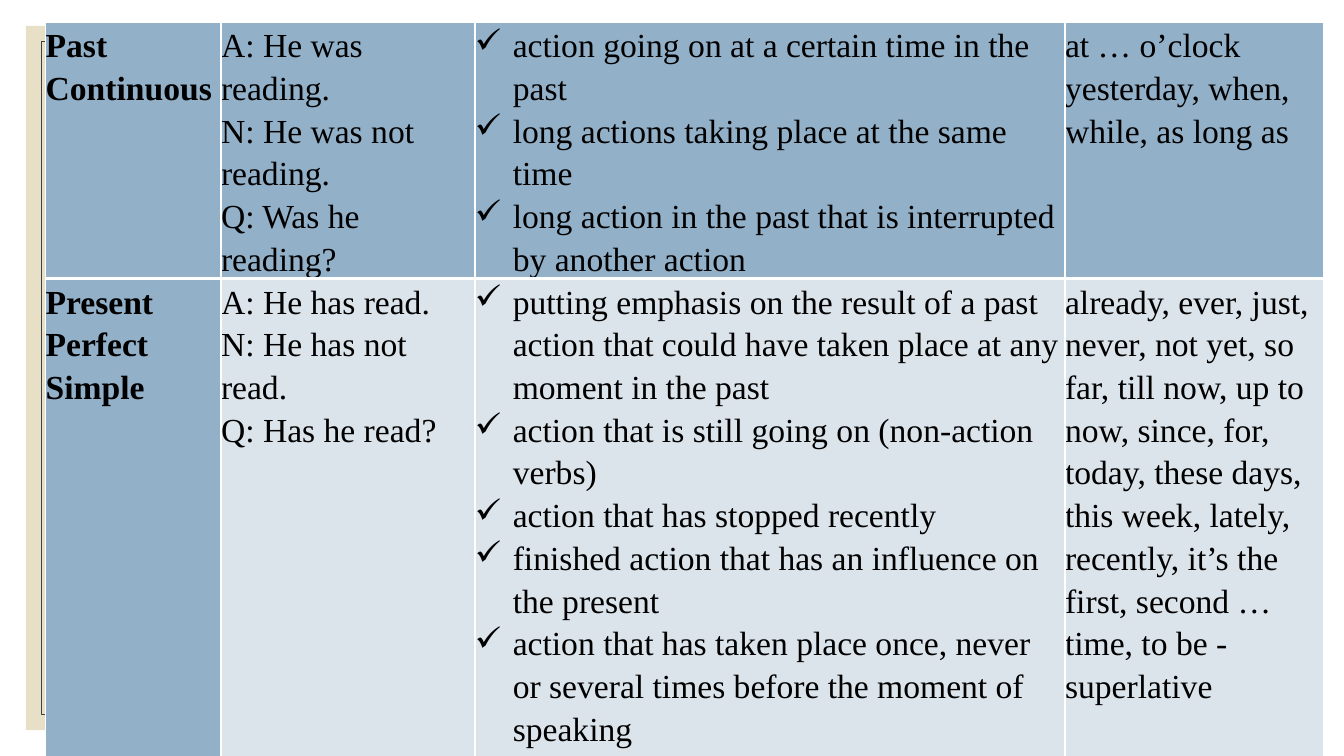
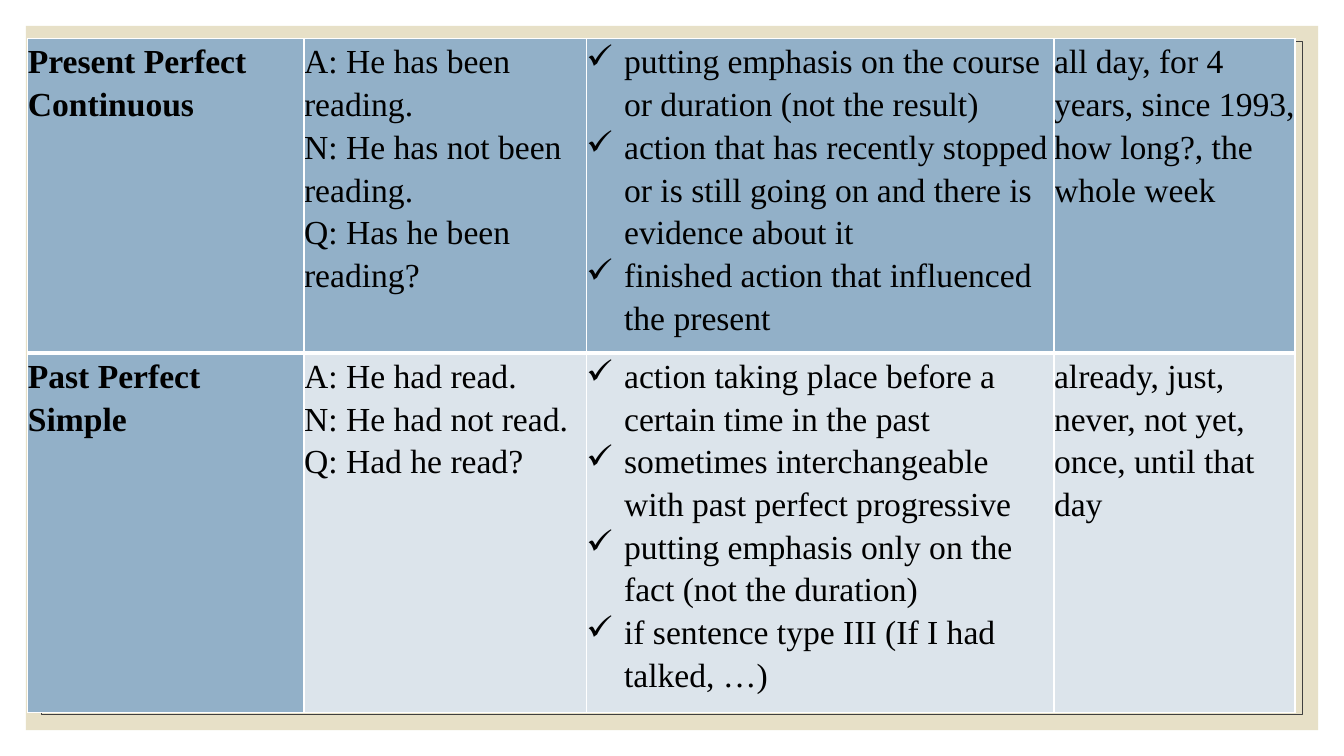
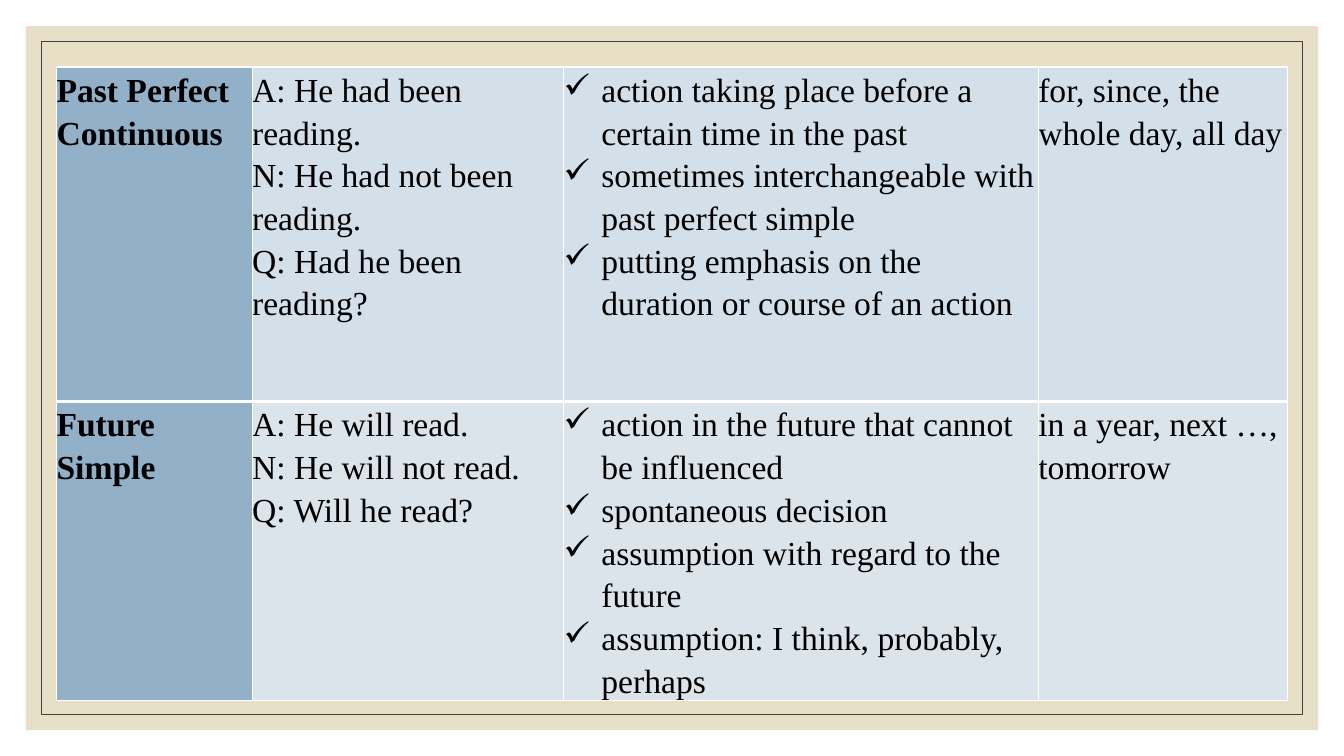
from lxml import etree
from pptx import Presentation
from pptx import util as u
from pptx.dml import color
from pptx.enum import shapes, text
from pptx.oxml import ns

COLORS = {
    "sand": "E7E0C7", "frame": "404040", "ink": "000000", "white": "FFFFFF",
    "blue": "92B0C8", "light": "D3DFE9", "pale": "DCE4EB",
}
FONT = "Times New Roman"
SIZE = 24
SPACING = 1.15
INDENT = 27
PAGE_WIDTH, PAGE_HEIGHT = 960, 540

TENSE_TABLES = [
    {
        "at": (32.6, 16),
        "columns": (125.3, 181.4, 421.5, 185),
        "heights": (182.2, 344.2),
        "fills": ("blue", "pale"),
        "rows": [
            ("Past Continuous",
             ["A: He was reading.", "N: He was not reading.", "Q: Was he reading?"],
             ["action going on at a certain time in the past",
              "long actions taking place at the same time",
              "long action in the past that is interrupted by another action"],
             "at … o’clock yesterday, when, while, as long as"),
            ("Present Perfect Simple",
             ["A: He has read.", "N: He has not read.", "Q: Has he read?"],
             ["putting emphasis on the result of a past action that could have "
              "taken place at any moment in the past",
              "action that is still going on (non-action verbs)",
              "action that has stopped recently",
              "finished action that has an influence on the present",
              "action that has taken place once, never or several times before "
              "the moment of speaking"],
             "already, ever, just, never, not yet, so far, till now, up to now, "
             "since, for, today, these days, this week, lately, recently, "
             "it’s the first, second …time, to be - superlative"),
        ],
    },
    {
        "at": (19.9, 27.5),
        "columns": (197.3, 201.6, 334.1, 172.1),
        "heights": (224.6, 257),
        "fills": ("blue", "pale"),
        "rows": [
            ("Present Perfect Continuous",
             ["A: He has been reading.", "N: He has not been reading.",
              "Q: Has he been reading?"],
             ["putting emphasis on the course or duration (not the result)",
              "action that has recently stopped or is still going on and there "
              "is evidence about it",
              "finished action that influenced the present"],
             "all day, for 4 years, since 1993, how long?, the whole week"),
            ("Past Perfect Simple",
             ["A: He had read.", "N: He had not read.", "Q: Had he read?"],
             ["action taking place before a certain time in the past",
              "sometimes interchangeable with past perfect progressive",
              "putting emphasis only on the fact (not the duration)",
              "if sentence type III (If I had talked, …)"],
             "already, just, never, not yet, once, until that day"),
        ],
    },
    {
        "at": (40.4, 47.8),
        "columns": (139.7, 222.5, 339.1, 177.8),
        "heights": (239, 213),
        "fills": ("light", "pale"),
        "rows": [
            ("Past Perfect Continuous",
             ["A: He had been reading.", "N: He had not been reading.",
              "Q: Had he been reading?"],
             ["action taking place before a certain time in the past",
              "sometimes interchangeable with past perfect simple",
              "putting emphasis on the duration or course of an action"],
             "for, since, the whole day, all day"),
            ("Future Simple",
             ["A: He will read.", "N: He will not read.", "Q: Will he read?"],
             ["action in the future that cannot be influenced",
              "spontaneous decision",
              "assumption with regard to the future",
              "assumption: I think, probably, perhaps"],
             "in a year, next …, tomorrow"),
        ],
    },
]


def rgb(name):
    return color.RGBColor.from_string(COLORS[name])


def add_panel(page, margin, fill=None, line=None):
    panel = page.shapes.add_shape(
        shapes.MSO_SHAPE.RECTANGLE, u.Pt(margin), u.Pt(margin),
        u.Pt(PAGE_WIDTH - 2 * margin), u.Pt(PAGE_HEIGHT - 2 * margin))
    panel.shadow.inherit = False
    if fill:
        panel.fill.solid()
        panel.fill.fore_color.rgb = rgb(fill)
    else:
        panel.fill.background()
    if line:
        panel.line.color.rgb = rgb(line)
        panel.line.width = u.Pt(0.5)
    else:
        panel.line.fill.background()
    return panel


def share_frame(page):
    for panel in (add_panel(page, 18.5, fill="sand"),
                  add_panel(page, 29.5, line="frame")):
        page.slide_layout.shapes.element.append(panel.element)


def add_borders(cell, top, bottom):
    properties = cell._tc.get_or_add_tcPr()
    for side, width in (("L", 1), ("R", 1), ("T", top), ("B", bottom)):
        line = etree.SubElement(properties, ns.qn("a:ln" + side), w=str(u.Pt(width)))
        fill = etree.SubElement(line, ns.qn("a:solidFill"))
        etree.SubElement(fill, ns.qn("a:srgbClr"), val=COLORS["white"])


def add_check_bullet(para):
    properties = para._p.get_or_add_pPr()
    properties.set("marL", str(u.Pt(INDENT)))
    properties.set("indent", str(-u.Pt(INDENT)))
    etree.SubElement(properties, ns.qn("a:buChar"), char="✓")


def fill_cell(cell, lines, fill, bold=False, checked=False):
    cell.margin_left = cell.margin_right = cell.margin_top = cell.margin_bottom = 0
    cell.vertical_anchor = text.MSO_ANCHOR.TOP
    cell.fill.solid()
    cell.fill.fore_color.rgb = rgb(fill)
    frame = cell.text_frame
    for index, line in enumerate(lines):
        para = frame.add_paragraph() if index else frame.paragraphs[0]
        para.line_spacing = SPACING
        if checked:
            add_check_bullet(para)
        span = para.add_run()
        span.text = line
        span.font.name = FONT
        span.font.size = u.Pt(SIZE)
        span.font.bold = bold
        span.font.color.rgb = rgb("ink")


def add_tense_table(page, at, columns, heights, fills, rows):
    left, top = at
    table = page.shapes.add_table(
        len(rows), len(columns), u.Pt(left), u.Pt(top),
        u.Pt(sum(columns)), u.Pt(sum(heights))).table
    table.first_row = table.horz_banding = False
    for column, width in zip(table.columns, columns):
        column.width = u.Pt(width)
    for index, (tense, forms, uses, signals) in enumerate(rows):
        table.rows[index].height = u.Pt(heights[index])
        cells = table.rows[index].cells
        for cell in cells:
            add_borders(cell, top=3 if index else 1, bottom=1 if index else 3)
        fill = fills[index]
        fill_cell(cells[0], [tense], "blue", bold=True)
        fill_cell(cells[1], forms, fill)
        fill_cell(cells[2], uses, fill, checked=True)
        fill_cell(cells[3], [signals], fill)


def main():
    deck = Presentation()
    deck.slide_width = u.Pt(PAGE_WIDTH)
    deck.slide_height = u.Pt(PAGE_HEIGHT)
    blank = deck.slide_layouts[6]
    pages = [deck.slides.add_slide(blank) for _ in TENSE_TABLES]
    share_frame(pages[0])
    for page, content in zip(pages, TENSE_TABLES):
        add_tense_table(page, **content)
    deck.save("out.pptx")


if __name__ == "__main__":
    main()
